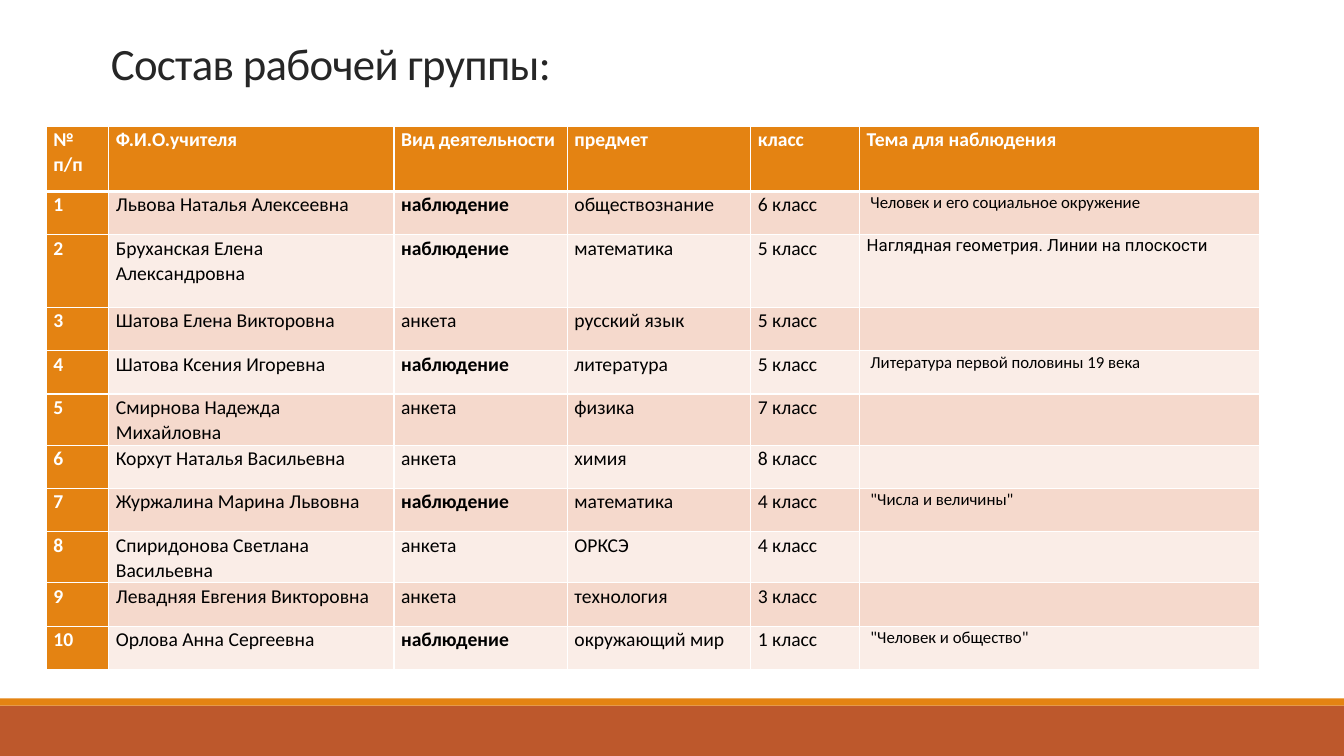
import pptx
import pptx.util
import pptx.dml.color
import pptx.enum.shapes
import pptx.enum.text
import pptx.oxml
import pptx.oxml.ns

Pt = pptx.util.Pt
HUES = {
    "bar": "BD582C", "head": "E48312", "title": "262626", "text": "000000",
    "white": "FFFFFF", "odd": "F5D9CC", "even": "FAEDE7",
}
FONT = "Calibri"
HEADS = ["№ п/п", "Ф.И.О.учителя", "Вид деятельности", "предмет", "класс",
         "Тема для наблюдения"]
WATCH, FORM = "наблюдение", "анкета"
STAFF = [
    ("Львова Наталья Алексеевна", WATCH, "обществознание", 6, " Человек и его социальное окружение"),
    ("Бруханская Елена Александровна", WATCH, "математика", 5, "Наглядная геометрия. Линии на плоскости"),
    ("Шатова Елена Викторовна", FORM, "русский язык", 5, ""),
    ("Шатова Ксения Игоревна", WATCH, "литература", 5, " Литература первой половины 19 века"),
    ("Смирнова Надежда Михайловна", FORM, "физика", 7, ""),
    ("Корхут Наталья Васильевна", FORM, "химия", 8, ""),
    ("Журжалина Марина Львовна", WATCH, "математика", 4, " \"Числа и величины\""),
    ("Спиридонова Светлана Васильевна", FORM, "ОРКСЭ", 4, ""),
    ("Левадняя Евгения Викторовна", FORM, "технология", 3, ""),
    ("Орлова Анна Сергеевна", WATCH, "окружающий мир", 1, " \"Человек и общество\""),
]
WIDTHS = [44.64, 203.76, 123.84, 131.04, 77.76, 285.84]
HEIGHTS = [46.8, 30.96, 51.84] + [30.96] * 8


class Page:
    """Hold the style and the current slide, and draw elements on it."""

    def __init__(self, deck, hues, font):
        self.hues = hues
        self.font = font
        self.slide = deck.slides.add_slide(deck.slide_layouts[5])

    def hue(self, name):
        return pptx.dml.color.RGBColor.from_string(self.hues[name])

    def paint(self, fill, name):
        fill.solid()
        fill.fore_color.rgb = self.hue(name)

    def run(self, para, text, size, hue, bold=False, font=None):
        run = para.add_run()
        run.text = text
        run.font.name = font or self.font
        run.font.size = Pt(size)
        run.font.bold = bold
        run.font.color.rgb = self.hue(hue)
        return run

    def bar(self, top, high, hue):
        kind = pptx.enum.shapes.MSO_SHAPE.RECTANGLE
        bar = self.slide.shapes.add_shape(kind, 0, Pt(top), Pt(960), Pt(high))
        bar.shadow.inherit = False
        bar.line.fill.background()
        self.paint(bar.fill, hue)

    def title(self, text, left, top, width, high):
        box = self.slide.shapes.title
        box.left, box.top, box.width, box.height = map(Pt, (left, top, width, high))
        frame = box.text_frame
        frame.word_wrap = True
        frame.vertical_anchor = pptx.enum.text.MSO_ANCHOR.BOTTOM
        para = frame.paragraphs[0]
        para.alignment = pptx.enum.text.PP_ALIGN.LEFT
        para.line_spacing = 0.85
        run = self.run(para, text, 32, "title")
        run._r.get_or_add_rPr().set("spc", "-50")

    def edge(self, cell, side, width):
        props = cell._tc.get_or_add_tcPr()
        props.append(pptx.oxml.parse_xml(
            f'<a:ln{side} {pptx.oxml.ns.nsdecls("a")} w="{Pt(width)}"><a:solidFill>'
            f'<a:srgbClr val="{self.hues["white"]}"/></a:solidFill></a:ln{side}>'))

    def cell(self, cell, text, fill, low=1, top=1, **style):
        cell.margin_left = cell.margin_right = Pt(5.04)
        cell.margin_top = cell.margin_bottom = 0
        for side, width in (("L", 1), ("R", 1), ("T", top), ("B", low)):
            self.edge(cell, side, width)
        self.paint(cell.fill, fill)
        para = cell.text_frame.paragraphs[0]
        para.line_spacing = 1.07
        para.space_after = Pt(8)
        if text:
            self.run(para, text, **style)

    def table(self, rows, widths, highs, left, top):
        frame = self.slide.shapes.add_table(
            len(rows), len(widths), Pt(left), Pt(top), Pt(sum(widths)), Pt(sum(highs)))
        grid = frame.table
        grid.first_col = True
        grid.horz_banding = False
        for col, width in zip(grid.columns, widths):
            col.width = Pt(width)
        for line, high in zip(grid.rows, highs):
            line.height = Pt(high)
        for r, row in enumerate(rows):
            for c, text in enumerate(row):
                head = r == 0 or c == 0
                topic = c == 5 and not head
                self.cell(
                    grid.cell(r, c), text,
                    "head" if head else "odd" if r % 2 else "even",
                    low=3 if r == 0 else 1, top=3 if r == 1 else 1,
                    size=12 if topic else 14,
                    hue="white" if head else "text",
                    bold=head or text == WATCH,
                    font="Roboto" if topic and r == 2 else None)


def main():
    deck = pptx.Presentation()
    deck.slide_width, deck.slide_height = Pt(960), Pt(540)
    page = Page(deck, HUES, FONT)
    page.bar(504, 36, "bar")
    page.bar(498.96, 5.04, "head")
    page.title("Состав рабочей группы:", 72, 18.72, 792, 48.96)
    rows = [HEADS] + [
        (str(n), name, kind, topic, f"{form} класс", theme)
        for n, (name, kind, topic, form, theme) in enumerate(STAFF, 1)]
    page.table(rows, WIDTHS, HEIGHTS, 33.12, 90)
    deck.save("out.pptx")


if __name__ == "__main__":
    main()
